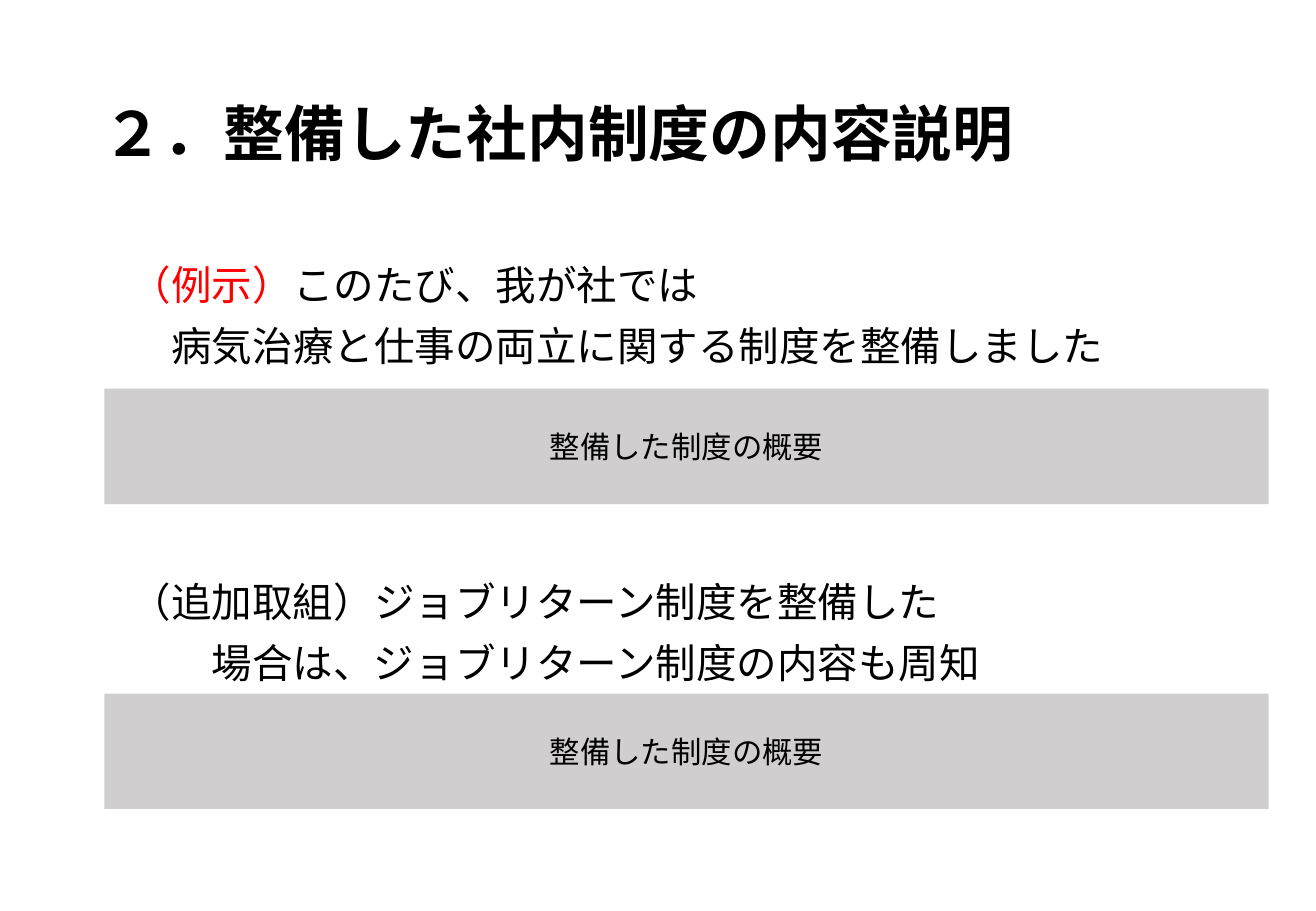
from dataclasses import dataclass

from pptx import Presentation
from pptx.dml.color import RGBColor
from pptx.enum.shapes import MSO_SHAPE
from pptx.enum.text import MSO_ANCHOR, PP_ALIGN
from pptx.util import Inches, Pt

RECT = MSO_SHAPE.RECTANGLE
MIDDLE = MSO_ANCHOR.MIDDLE
LEFT = PP_ALIGN.LEFT
CENTER = PP_ALIGN.CENTER
TITLE_ONLY = 5


@dataclass(frozen=True)
class Theme:
    font: str = "Calibri"
    ink: RGBColor = RGBColor(0x00, 0x00, 0x00)
    red: RGBColor = RGBColor(0xFF, 0x00, 0x00)
    gray: RGBColor = RGBColor(0xD0, 0xCE, 0xCE)
    head: int = 36
    body: int = 24
    label: int = 18
    gap: int = 10
    lead: float = 0.9


THEME = Theme()


def add_run(para, text, size, color=THEME.ink, bold=False):
    run = para.add_run()
    run.text = text
    run.font.name = THEME.font
    run.font.size = Pt(size)
    run.font.bold = bold
    run.font.color.rgb = color


def set_title(slide, text):
    title = slide.shapes.title
    title.left, title.top = Inches(0.74), Inches(0.4)
    title.width, title.height = Inches(9.34), Inches(1.45)
    frame = title.text_frame
    frame.vertical_anchor = MIDDLE
    para = frame.paragraphs[0]
    para.alignment = LEFT
    para.line_spacing = THEME.lead
    add_run(para, text, THEME.head, bold=True)


def add_text(slide, top, lines):
    box = slide.shapes.add_textbox(
        Inches(0.98), Inches(top), Inches(9.34), Inches(1)
    )
    frame = box.text_frame
    frame.word_wrap = True
    for row, (indent, runs) in enumerate(lines):
        para = frame.add_paragraph() if row else frame.paragraphs[0]
        para.line_spacing = THEME.lead
        para.space_after = Pt(THEME.gap)
        margin = Pt(indent * THEME.body)
        para._p.get_or_add_pPr().set("marL", str(margin))
        for text, color in runs:
            add_run(para, text, THEME.body, color)


def add_panel(slide, top, text):
    panel = slide.shapes.add_shape(
        RECT, Inches(0.86), Inches(top), Inches(9.58), Inches(0.95)
    )
    panel.shadow.inherit = False
    panel.fill.solid()
    panel.fill.fore_color.rgb = THEME.gray
    panel.line.fill.background()
    frame = panel.text_frame
    frame.vertical_anchor = MIDDLE
    para = frame.paragraphs[0]
    para.alignment = CENTER
    add_run(para, text, THEME.label)


def main():
    deck = Presentation()
    deck.slide_width, deck.slide_height = Inches(10.83), Inches(7.5)
    slide = deck.slides.add_slide(deck.slide_layouts[TITLE_ONLY])
    set_title(slide, "２．整備した社内制度の内容説明")

    ink, red = THEME.ink, THEME.red
    example = [
        (0, [("（例示）", red), ("このたび、我が社では", ink)]),
        (1, [("病気治療と仕事の両立に関する制度を整備しました", ink)]),
    ]
    extra = [
        (0, [("（追加取組）ジョブリターン制度を整備した", ink)]),
        (2, [("場合は、ジョブリターン制度の内容も周知", ink)]),
    ]
    for top, lines, base in ((2.14, example, 3.2), (4.75, extra, 5.71)):
        add_text(slide, top, lines)
        add_panel(slide, base, "整備した制度の概要")

    deck.save("out.pptx")


if __name__ == "__main__":
    main()
